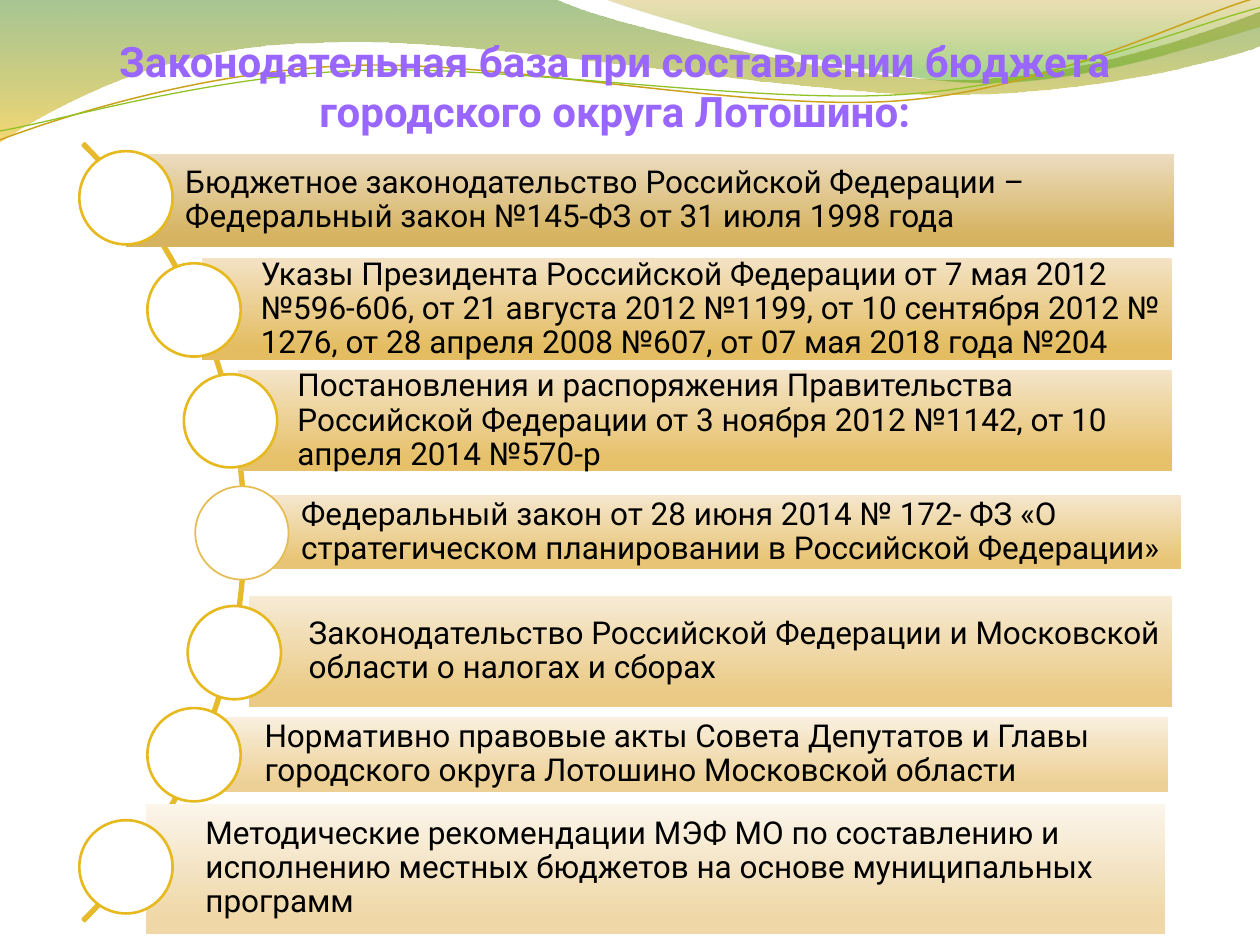
from dataclasses import dataclass
from math import cos, radians, sin

from lxml.etree import SubElement
from pptx import Presentation
from pptx.dml.color import RGBColor
from pptx.enum.shapes import MSO_SHAPE
from pptx.enum.text import MSO_ANCHOR, MSO_AUTO_SIZE, PP_ALIGN
from pptx.oxml.ns import qn
from pptx.util import Pt

PX = 9144
FONT = "Roboto"
CIRCLE = 74
TILT = 2.7

COLORS = {
    "title": "9966FF", "text": "000000", "white": "FFFFFF",
    "arc": "E6BA2C", "ring": "E6B91E", "pale_ring": "E5BD54",
    "green": "3C800F", "yellow": "ECB700", "ochre": "C09500", "grass": "46A407",
    "gold_line": "CBA31A", "green_line": "90C226",
    "code_top": "ECDCC0", "code_end": "D6B360",
    "decrees_top": "F3E2C4", "decrees_end": "E4BD62",
    "orders_top": "F4E4C8", "orders_end": "E6C16A",
    "planning_top": "F5E7CE", "planning_end": "E8C576",
    "taxes_top": "F7EBD5", "taxes_end": "EACA85",
    "local_top": "F9F0DF", "local_end": "EDD095",
    "advice_top": "FBF5EA", "advice_end": "EFD7A7",
}


@dataclass
class Stop:
    color: str
    position: int
    opacity: int = 100


@dataclass
class Wave:
    start: tuple
    segments: list
    stops: tuple = ()
    line: str = ""
    weight: float = 0
    pivot: tuple = ()


@dataclass
class Item:
    name: str
    box: tuple
    circle: tuple
    text: str
    ring: str = "ring"
    weight: float = 1.5


WAVES = [
    Wave((0, -1), [
        (440, -1),
        (476, 17, 664, 63, 758, 63), (853, 63, 958, 26, 1000, 9),
        (1001, 36),
        (983, 44, 870, 76, 746, 75), (622, 75, 382, 28, 257, 34),
        (129, 35, 46, 83, -1, 113),
    ], (Stop("green", 0, 45), Stop("yellow", 100, 55))),
    Wave((479, -1), [
        (509, 11, 682, 62, 769, 65), (856, 69, 961, 32, 1000, 21),
        (1000, 0),
    ], (Stop("ochre", 0, 30), Stop("grass", 80, 45))),
    Wave((0, 111), [
        (48, 93, 158, 57, 277, 52), (395, 47, 593, 89, 713, 80),
        (833, 71, 938, 15, 998, -2),
    ], line="gold_line", weight=0.85, pivot=(499, 57)),
    Wave((0, 104), [
        (47, 96, 164, 61, 283, 56), (403, 51, 597, 83, 717, 75),
        (836, 67, 941, 21, 1000, 6),
    ], line="green_line", weight=0.75, pivot=(500, 59)),
]

ITEMS = [
    Item("code", (100, 122, 832, 74), (63, 120),
         "Бюджетное законодательство Российской Федерации – "
         "Федеральный закон №145-ФЗ от 31 июля 1998 года"),
    Item("decrees", (160, 205, 770, 81), (117, 209),
         "Указы Президента Российской Федерации от 7 мая 2012 №596-606, "
         "от 21 августа 2012 №1199, от 10 сентября 2012 № 1276, "
         "от 28 апреля 2008 №607, от 07 мая 2018 года №204"),
    Item("orders", (189, 294, 741, 80), (146, 297),
         "Постановления и распоряжения Правительства Российской Федерации "
         "от 3 ноября 2012 №1142, от 10 апреля 2014 №570-р"),
    Item("planning", (192, 393, 745, 59), (155, 386),
         "Федеральный закон от 28 июня 2014 № 172- ФЗ "
         "«О стратегическом планировании в Российской Федерации»",
         "pale_ring", 1),
    Item("taxes", (198, 473, 732, 88), (149, 481),
         "Законодательство Российской Федерации и Московской области "
         "о налогах и сборах"),
    Item("local", (163, 569, 764, 60), (117, 562),
         "Нормативно правовые акты Совета Депутатов и Главы "
         "городского округа Лотошино Московской области"),
    Item("advice", (116, 638, 809, 103), (63, 651),
         "Методические рекомендации МЭФ МО по составлению и исполнению "
         "местных бюджетов на основе муниципальных программ"),
]


def rgb(name: str) -> RGBColor:
    return RGBColor.from_string(COLORS[name])


def fill_gradient(sp, stops: tuple) -> None:
    sp.fill.gradient()
    sp.fill.gradient_angle = 270
    for gs, stop in zip(sp.fill.gradient_stops, stops):
        gs.color.rgb = rgb(stop.color)
        gs.position = stop.position / 100
    for clr, stop in zip(sp.element.iter(qn("a:srgbClr")), stops):
        if stop.opacity < 100:
            SubElement(clr, qn("a:alpha")).set("val", str(stop.opacity * 1000))


def set_line(sp, color: str, weight: float) -> None:
    sp.line.color.rgb = rgb(color)
    sp.line.width = Pt(weight)


def turn(point: tuple, pivot: tuple) -> tuple:
    angle = radians(TILT)
    dx, dy = point[0] - pivot[0], point[1] - pivot[1]
    return (pivot[0] + dx * cos(angle) - dy * sin(angle),
            pivot[1] + dx * sin(angle) + dy * cos(angle))


def bend_segments(sp, segments: list) -> None:
    lines = iter(list(sp.element.iter(qn("a:lnTo"))))
    for segment in segments:
        curve = next(lines)
        if len(segment) == 6:
            curve.tag = qn("a:cubicBezTo")
            for extra in (next(lines), next(lines)):
                curve.append(extra[0])
                extra.getparent().remove(extra)


def add_wave(s, wave: Wave) -> None:
    points = [wave.start]
    for segment in wave.segments:
        points += zip(segment[::2], segment[1::2])
    if wave.pivot:
        points = [turn(point, wave.pivot) for point in points]
    scaled = [(x * PX, y * PX) for x, y in points]
    builder = s.shapes.build_freeform(*scaled[0])
    builder.add_line_segments(scaled[1:], close=bool(wave.stops))
    sp = builder.convert_to_shape()
    bend_segments(sp, wave.segments)
    sp.shadow.inherit = False
    if wave.stops:
        fill_gradient(sp, wave.stops)
        sp.line.fill.background()
    else:
        sp.rotation = 360 - TILT
        sp.fill.background()
        set_line(sp, wave.line, wave.weight)


def add_preset(s, kind: MSO_SHAPE, box: tuple):
    sp = s.shapes.add_shape(kind, *(v * PX for v in box))
    sp.shadow.inherit = False
    return sp


def format_text(p, size: int, color: str) -> None:
    p.font.name = FONT
    p.font.size = Pt(size)
    p.font.color.rgb = rgb(color)


def set_title(s, text: str) -> None:
    title = s.shapes.title
    title.left, title.top, title.width, title.height = (
        v * PX for v in (39, 23, 898, 78))
    tf = title.text_frame
    tf.text = text
    tf.word_wrap = True
    tf.auto_size = MSO_AUTO_SIZE.NONE
    tf.vertical_anchor = MSO_ANCHOR.TOP
    p = tf.paragraphs[0]
    p.alignment = PP_ALIGN.CENTER
    p.space_after = Pt(3)
    format_text(p, 24, "title")
    p.font.bold = True
    title.element.getparent().append(title.element)


def add_arc(s) -> None:
    sp = add_preset(s, MSO_SHAPE.BLOCK_ARC, (-678, -14, 873, 873))
    for i, value in enumerate((189, 27, 0.0025)):
        sp.adjustments[i] = value
    sp.fill.background()
    set_line(sp, "arc", 1.5)


def add_item(s, item: Item) -> None:
    bar = add_preset(s, MSO_SHAPE.RECTANGLE, item.box)
    fill_gradient(bar, (Stop(f"{item.name}_top", 0), Stop(f"{item.name}_end", 88)))
    bar.line.fill.background()

    tf = s.shapes.add_textbox(*(v * PX for v in item.box)).text_frame
    tf.text = item.text
    tf.word_wrap = True
    tf.vertical_anchor = MSO_ANCHOR.MIDDLE
    tf.margin_left = 47 * PX
    tf.margin_top = tf.margin_right = tf.margin_bottom = 5 * PX
    p = tf.paragraphs[0]
    p.line_spacing = 0.9
    p.space_after = Pt(6.3)
    format_text(p, 18, "text")

    circle = add_preset(s, MSO_SHAPE.OVAL, (*item.circle, CIRCLE, CIRCLE))
    circle.fill.solid()
    circle.fill.fore_color.rgb = rgb("white")
    set_line(circle, item.ring, item.weight)


def main() -> None:
    prs = Presentation()
    prs.slide_width, prs.slide_height = 1000 * PX, 750 * PX
    s = prs.slides.add_slide(prs.slide_layouts[5])
    for wave in WAVES:
        add_wave(s, wave)
    set_title(s, "Законодательная база при составлении бюджета "
                 "городского округа Лотошино:")
    add_arc(s)
    for item in ITEMS:
        add_item(s, item)
    prs.save("out.pptx")


if __name__ == "__main__":
    main()
